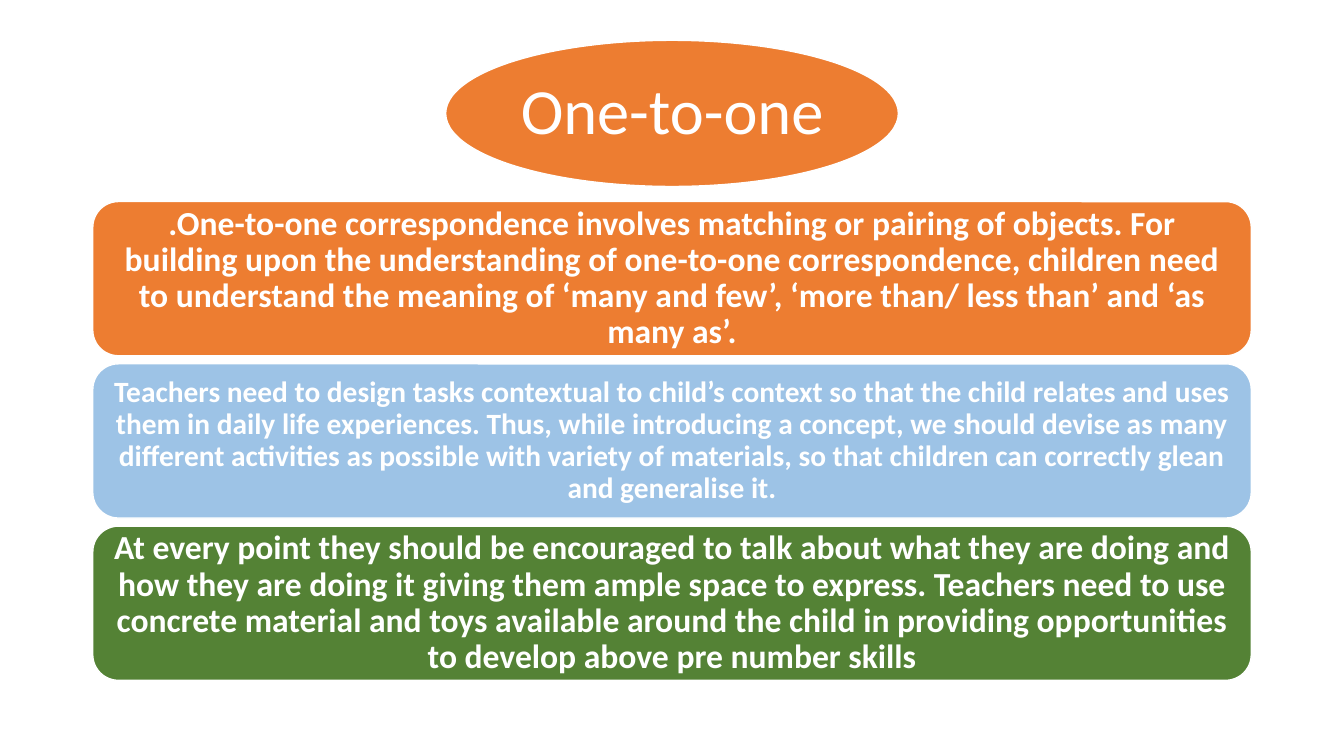
from pptx import Presentation
from pptx.dml.color import RGBColor
from pptx.enum.shapes import MSO_SHAPE as SHAPE
from pptx.enum.text import MSO_ANCHOR as ANCHOR, PP_ALIGN as ALIGN
from pptx.util import Inches, Pt

COLORS = {"orange": "ED7D31", "blue": "9DC3E6", "green": "548235", "white": "FFFFFF"}
FONT = "Calibri"
TITLE = "One-to-one"
PANELS = [
    ("orange", 24, ".One-to-one correspondence involves matching or pairing of objects. "
     "For building upon the understanding of one-to-one correspondence, children need "
     "to understand the meaning of ‘many and few’, ‘more than/ less than’ and ‘as many as’."),
    ("blue", 21, "Teachers need to design tasks contextual to child’s context so that the "
     "child relates and uses them in daily life experiences. Thus, while introducing a "
     "concept, we should devise as many different activities as possible with variety of "
     "materials, so that children can correctly glean and generalise it."),
    ("green", 24, "At every point they should be encouraged to talk about what they are "
     "doing and how they are doing it giving them ample space to express. Teachers need "
     "to use concrete material and toys available around the child in providing "
     "opportunities to develop above pre number skills"),
]

SLIDE_W, SLIDE_H = 13.33, 7.5
TITLE_W, TITLE_H, TITLE_TOP = 4.49, 1.45, 0.4
PANEL_W, PANEL_H, PANEL_TOP, PANEL_STEP = 11.49, 1.53, 2, 1.61


def rgb(name):
    return RGBColor.from_string(COLORS[name])


def set_text(sp, text, size, bold=False, margin_x=0.09, margin_y=0.04):
    tf = sp.text_frame
    tf.word_wrap = True
    tf.vertical_anchor = ANCHOR.MIDDLE
    tf.margin_left = tf.margin_right = Inches(margin_x)
    tf.margin_top = tf.margin_bottom = Inches(margin_y)
    p = tf.paragraphs[0]
    p.alignment = ALIGN.CENTER
    p.line_spacing = 0.9
    r = p.add_run()
    r.text = text
    r.font.name = FONT
    r.font.size = Pt(size)
    r.font.bold = bold
    r.font.color.rgb = rgb("white")


def add_centred_shape(slide, kind, top, width, height, fill):
    left = (SLIDE_W - width) / 2
    sp = slide.shapes.add_shape(kind, Inches(left), Inches(top), Inches(width), Inches(height))
    sp.shadow.inherit = False
    sp.fill.solid()
    sp.fill.fore_color.rgb = rgb(fill)
    sp.line.color.rgb = rgb("white")
    sp.line.width = Pt(1)
    return sp


def main():
    prs = Presentation()
    prs.slide_width, prs.slide_height = Inches(SLIDE_W), Inches(SLIDE_H)
    slide = prs.slides.add_slide(prs.slide_layouts[6])

    title = add_centred_shape(slide, SHAPE.OVAL, TITLE_TOP, TITLE_W, TITLE_H, "orange")
    set_text(title, TITLE, 46, margin_x=0.06, margin_y=0.06)

    for i, (fill, size, text) in enumerate(PANELS):
        panel = add_centred_shape(slide, SHAPE.ROUNDED_RECTANGLE, PANEL_TOP + i * PANEL_STEP,
                                  PANEL_W, PANEL_H, fill)
        set_text(panel, text, size, bold=True)

    prs.save("out.pptx")


if __name__ == "__main__":
    main()
